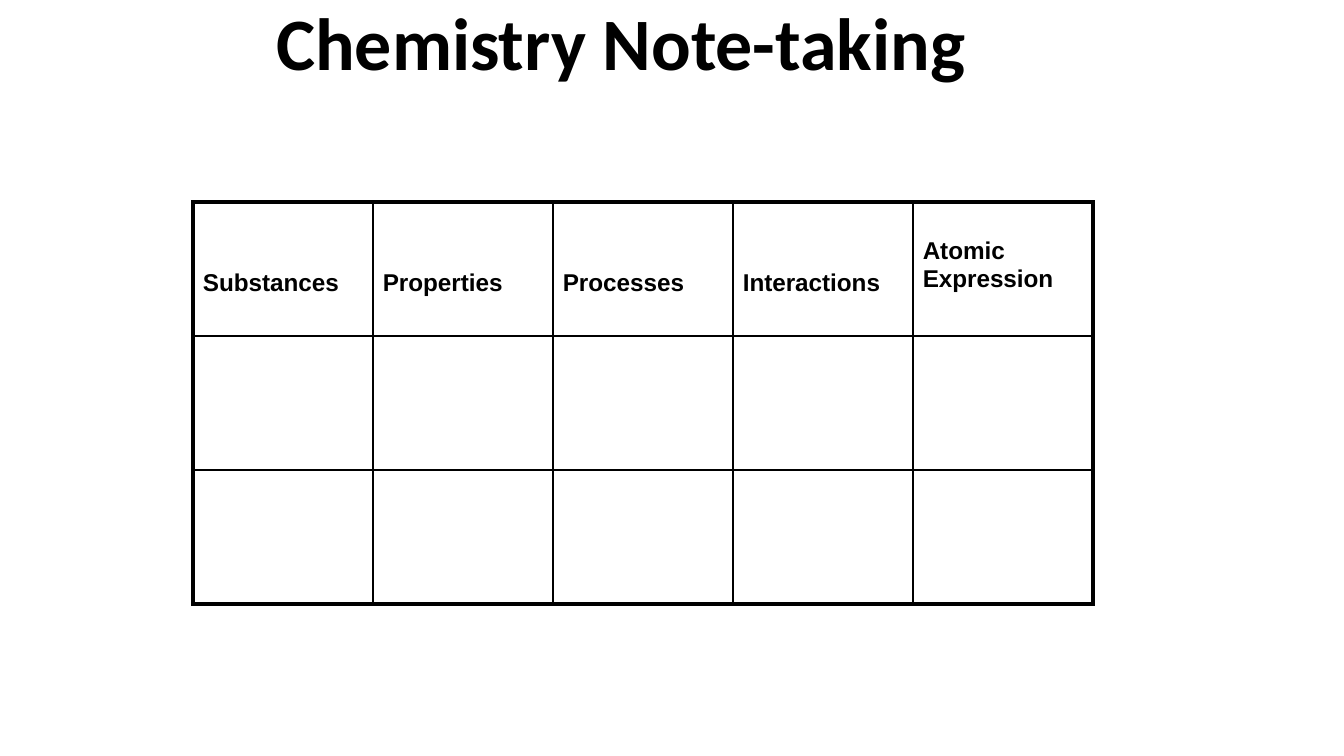
from lxml.etree import SubElement
from pptx import Presentation
from pptx.dml.color import RGBColor
from pptx.enum.text import MSO_ANCHOR, PP_ALIGN
from pptx.oxml.ns import qn
from pptx.util import Pt

PX = 914400 / 134.4
BLACK = RGBColor(0, 0, 0)
HEADERS = ["Substances", "Properties", "Processes", "Interactions", "Atomic Expression"]
ROWS = 3
COLUMN_WIDTH = 180
ROW_HEIGHT = 134


def px(length):
    return round(length * PX)


def add_border(cell, side, width):
    line = SubElement(cell._tc.get_or_add_tcPr(), qn(f"a:ln{side}"), w=str(Pt(width)))
    fill = SubElement(line, qn("a:solidFill"))
    SubElement(fill, qn("a:srgbClr"), val=str(BLACK))


presentation = Presentation()
presentation.slide_width = px(1344)
presentation.slide_height = px(756)
slide = presentation.slides.add_slide(presentation.slide_layouts[5])

title = slide.shapes.title
title.left, title.top, title.width, title.height = px(218), px(-16), px(806), px(106)
title_frame = title.text_frame
title_frame.text = "Chemistry Note-taking"
title_frame.vertical_anchor = MSO_ANCHOR.MIDDLE
title_frame.margin_top = px(8)
title_frame.margin_bottom = 0
title_paragraph = title_frame.paragraphs[0]
title_paragraph.alignment = PP_ALIGN.CENTER
title_font = title_paragraph.runs[0].font
title_font.name = "Calibri"
title_font.size = Pt(39.6)
title_font.bold = True
title_font.color.rgb = BLACK

columns = len(HEADERS)
table = slide.shapes.add_table(
    ROWS, columns, px(193), px(202), px(COLUMN_WIDTH * columns), px(ROW_HEIGHT * ROWS)
).table
table.first_row = False
table.horz_banding = False
for column in table.columns:
    column.width = px(COLUMN_WIDTH)
for row in table.rows:
    row.height = px(ROW_HEIGHT)

for row_index in range(ROWS):
    for column_index in range(columns):
        cell = table.cell(row_index, column_index)
        outer_sides = {
            "L": column_index == 0,
            "R": column_index == columns - 1,
            "T": row_index == 0,
            "B": row_index == ROWS - 1,
        }
        for side, is_outer in outer_sides.items():
            add_border(cell, side, 2.25 if is_outer else 1)
        cell.fill.background()

for column_index, header in enumerate(HEADERS):
    cell = table.cell(0, column_index)
    cell.margin_left = cell.margin_right = px(10)
    cell.margin_top = px(36 if " " in header else 68)
    cell.margin_bottom = px(5)
    cell.text_frame.text = header
    font = cell.text_frame.paragraphs[0].runs[0].font
    font.name = "Arial"
    font.size = Pt(13)
    font.bold = True
    font.color.rgb = BLACK

presentation.save("out.pptx")
